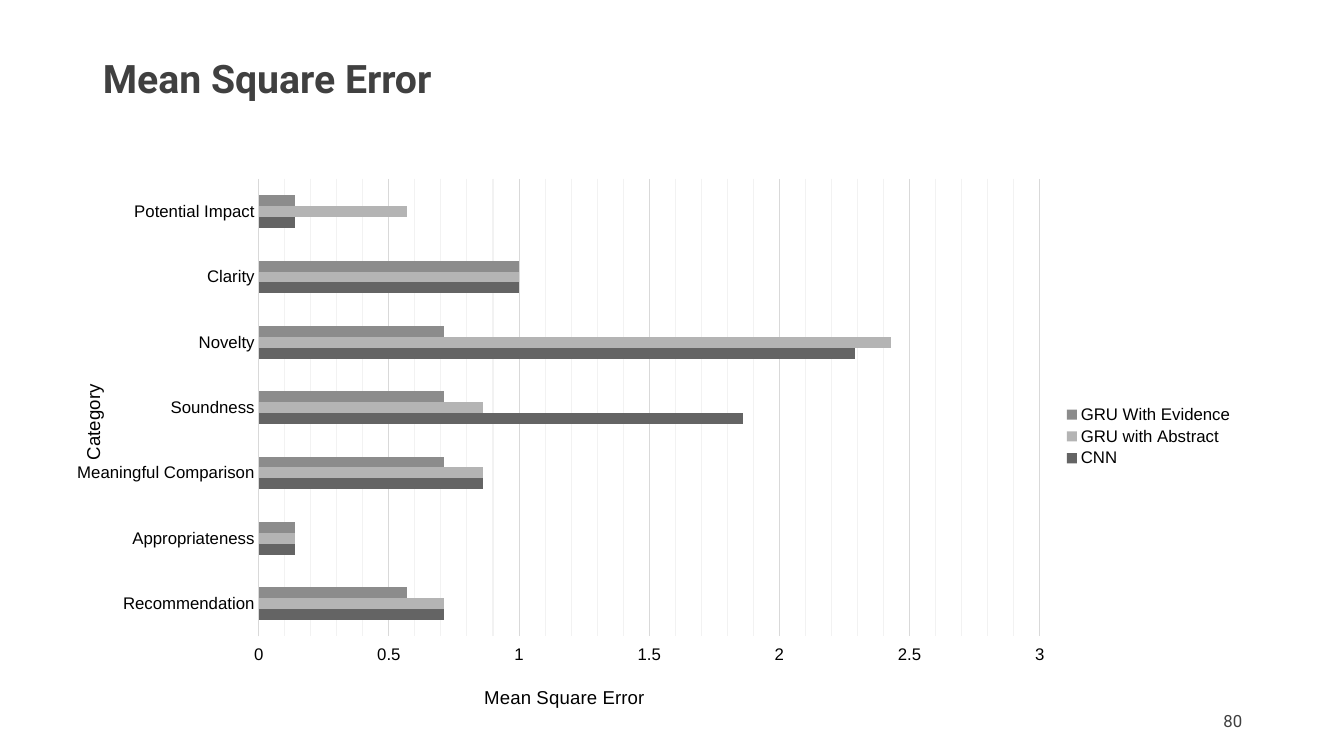
from copy import deepcopy

from lxml import etree
from pptx import Presentation
from pptx import util as u
from pptx.chart.data import CategoryChartData
from pptx.dml.color import RGBColor
from pptx.enum import chart as ch, text
from pptx.oxml import ns

DARK = RGBColor(0x40, 0x40, 0x40)
BLACK = RGBColor(0, 0, 0)
GRID = RGBColor(0xD9, 0xD9, 0xD9)
FAINT_GRID = RGBColor(0xF2, 0xF2, 0xF2)

CATEGORIES = ["Recommendation", "Appropriateness", "Meaningful Comparison",
              "Soundness", "Novelty", "Clarity", "Potential Impact"]
MODELS = [
    ("CNN", RGBColor(0x64, 0x64, 0x64), [0.71, 0.14, 0.86, 1.86, 2.29, 1, 0.14]),
    ("GRU with Abstract", RGBColor(0xB4, 0xB4, 0xB4), [0.71, 0.14, 0.86, 0.86, 2.43, 1, 0.57]),
    ("GRU With Evidence", RGBColor(0x8C, 0x8C, 0x8C), [0.57, 0.14, 0.71, 0.71, 0.71, 1, 0.14]),
]


def set_all(target, values):
    for name, value in values.items():
        setattr(target, name, value)


def style_font(font, name, size, color, bold=False):
    set_all(font, {"name": name, "size": u.Pt(size), "bold": bold})
    font.color.rgb = color


def style_line(line, color):
    line.color.rgb = color
    line.width = u.Pt(0.75)


def write_text(box, words, size, bold=False, **paragraph_format):
    frame = box.text_frame
    set_all(frame, {
        "word_wrap": True, "vertical_anchor": text.MSO_ANCHOR.MIDDLE,
        "margin_left": u.Inches(0.1), "margin_right": u.Inches(0.1),
        "margin_top": u.Inches(0.05), "margin_bottom": u.Inches(0.05)})
    paragraph = frame.paragraphs[0]
    set_all(paragraph, paragraph_format)
    run = paragraph.add_run()
    run.text = words
    style_font(run.font, "Roboto", size, DARK, bold)


def make_layout(**settings):
    """Return a manual chart layout, with lengths as shares of the chart."""
    layout = etree.Element(ns.qn("c:layout"))
    manual = etree.SubElement(layout, ns.qn("c:manualLayout"))
    for tag, value in settings.items():
        etree.SubElement(manual, ns.qn("c:" + tag)).set("val", str(value))
    return layout


def place(element, layout, after=None):
    """Give a plot area or an axis title its manual layout."""
    for old in element.findall(ns.qn("c:layout")):
        element.remove(old)
    if after is None:
        element.insert(0, layout)
    else:
        element.find(ns.qn(after)).addnext(layout)


def style_axis(axis, title, x, y):
    style_font(axis.tick_labels.font, "Arial", 12, BLACK)
    axis.axis_title.text_frame.text = title
    run = axis.axis_title.text_frame.paragraphs[0].runs[0]
    style_font(run.font, "Arial", 13.3, BLACK)
    place(axis.axis_title._element,
          make_layout(xMode="edge", yMode="edge", x=x, y=y), after="c:tx")


def style_gridlines(axis):
    """Style the major gridlines, then the minor ones alike but fainter."""
    style_line(axis.major_gridlines.format.line, GRID)
    major = axis._element.find(ns.qn("c:majorGridlines"))
    minor = axis._element.find(ns.qn("c:minorGridlines"))
    minor.append(deepcopy(major.find(ns.qn("c:spPr"))))
    for color in minor.iter(ns.qn("a:srgbClr")):
        color.set("val", str(FAINT_GRID))


def add_error_chart(slide):
    data = CategoryChartData()
    data.categories = CATEGORIES
    for name, _, errors in MODELS:
        data.add_series(name, errors)
    chart = slide.shapes.add_chart(
        ch.XL_CHART_TYPE.BAR_CLUSTERED, u.Inches(0.69), u.Inches(1.56),
        u.Inches(11.65), u.Inches(5.54), data).chart
    chart.has_title = False
    style_font(chart.font, "Arial", 10, BLACK)

    # Bars
    bars = chart.plots[0]
    set_all(bars, {"gap_width": 300, "overlap": 0, "vary_by_categories": False})
    for model, (_, color, _) in zip(bars.series, MODELS):
        model.format.fill.solid()
        model.format.fill.fore_color.rgb = color
    place(chart._chartSpace.chart.plotArea, make_layout(
        layoutTarget="inner", xMode="edge", yMode="edge",
        x=0.161, y=0.039, w=0.665, h=0.819))

    # Axes and gridlines
    categories, errors = chart.category_axis, chart.value_axis
    style_axis(categories, "Category", 0.007, 0.4)
    set_all(categories, {"major_tick_mark": ch.XL_TICK_MARK.NONE,
                         "has_major_gridlines": False})
    style_line(categories.format.line, GRID)
    style_axis(errors, "Mean Square Error", 0.35, 0.94)
    set_all(errors, {
        "minimum_scale": 0, "maximum_scale": 3, "major_unit": 0.5, "minor_unit": 0.1,
        "has_major_gridlines": True, "has_minor_gridlines": True,
        "major_tick_mark": ch.XL_TICK_MARK.OUTSIDE})
    errors.format.line.fill.background()
    style_gridlines(errors)

    # Legend
    chart.has_legend = True
    set_all(chart.legend, {"position": ch.XL_LEGEND_POSITION.RIGHT,
                           "include_in_layout": False})
    style_font(chart.legend.font, "Arial", 12, BLACK)


def main():
    deck = Presentation()
    set_all(deck, {"slide_width": u.Inches(13.33), "slide_height": u.Inches(7.5)})
    slide = deck.slides.add_slide(deck.slide_layouts[5])

    # Title
    heading = slide.shapes.title
    set_all(heading, {"left": u.Inches(0.92), "top": u.Inches(0.4),
                      "width": u.Inches(11.5), "height": u.Inches(0.81)})
    write_text(heading, "Mean Square Error", 28, bold=True,
               alignment=text.PP_ALIGN.LEFT, line_spacing=0.9)

    # Page number
    page_number = slide.shapes.add_textbox(
        u.Inches(9.42), u.Inches(6.95), u.Inches(3), u.Inches(0.4))
    write_text(page_number, "80", 12, alignment=text.PP_ALIGN.RIGHT)

    add_error_chart(slide)
    deck.save("out.pptx")


if __name__ == "__main__":
    main()
